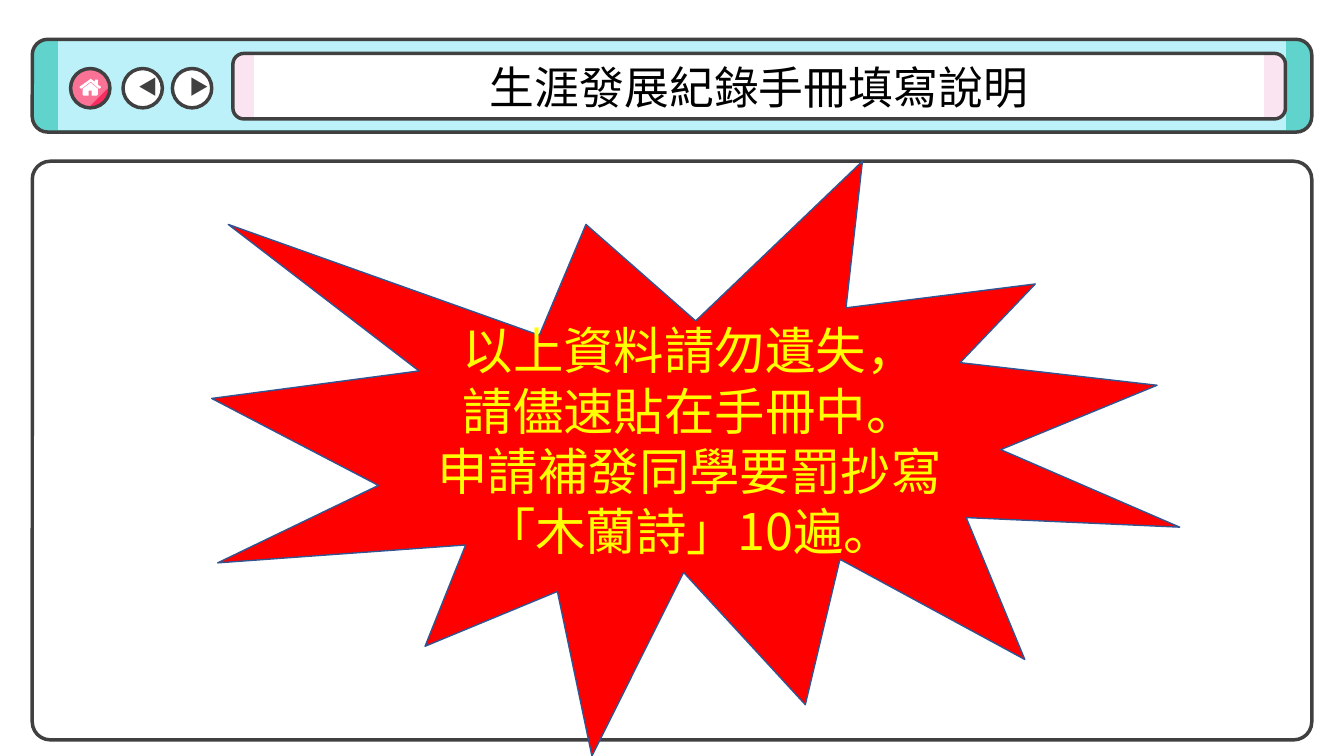
from dataclasses import dataclass

from lxml import etree
from pptx import Presentation
from pptx.dml.color import RGBColor
from pptx.enum.shapes import MSO_SHAPE
from pptx.enum.text import MSO_ANCHOR, PP_ALIGN
from pptx.oxml.ns import qn
from pptx.util import Inches, Pt

ROUND_RECT = MSO_SHAPE.ROUNDED_RECTANGLE
OVAL = MSO_SHAPE.OVAL
BURST = MSO_SHAPE.EXPLOSION1
MIDDLE = MSO_ANCHOR.MIDDLE
CENTER = PP_ALIGN.CENTER


@dataclass(frozen=True)
class Theme:
    outline: str = "404040"
    white: str = "FFFFFF"
    black: str = "000000"
    aqua: str = "BCF1FA"
    teal: str = "60D4CC"
    rose: str = "FA7296"
    crimson: str = "F82C61"
    blush: str = "FAE4F1"
    red: str = "FF0000"
    yellow: str = "FFFF00"
    burst_line: str = "325491"
    font: str = "Noto Sans CJK JP"
    arrow_font: str = "Noto Sans CJK KR"
    arrow_size: int = 14
    title_size: int = 32
    warning_size: int = 36
    frame_width: float = 2.5
    burst_width: float = 1


theme = Theme()


def paint(shape, colors, line=theme.outline, width=theme.frame_width,
          stops=(0.96, 0.96), route="shape", focus=(50, 50, 50, 50)):
    """Fill with one colour, or two as a path gradient around focus (l, t, r, b in %)."""
    shape.shadow.inherit = False
    if len(colors) == 1:
        shape.fill.solid()
        shape.fill.fore_color.rgb = RGBColor.from_string(colors[0])
    else:
        shape.fill.gradient()
        for stop, color, position in zip(shape.fill.gradient_stops, colors, stops):
            stop.color.rgb = RGBColor.from_string(color)
            stop.position = position
        linear = shape.element.spPr.find(qn("a:gradFill")).find(qn("a:lin"))
        gradient = linear.getparent()
        gradient.remove(linear)
        radial = etree.SubElement(gradient, qn("a:path"), {"path": route})
        edges = {side: str(share * 1000) for side, share in zip("ltrb", focus)}
        etree.SubElement(radial, qn("a:fillToRect"), edges)
    if line is None:
        shape.line.fill.background()
    else:
        shape.line.color.rgb = RGBColor.from_string(line)
        shape.line.width = Pt(width)


def write(shape, lines, size, color, font=theme.font, insets=(0.1, 0.05, 0.1, 0.05)):
    frame = shape.text_frame
    frame.word_wrap = True
    frame.vertical_anchor = MIDDLE
    (frame.margin_left, frame.margin_top,
     frame.margin_right, frame.margin_bottom) = map(Inches, insets)
    for index, line in enumerate(lines):
        para = frame.add_paragraph() if index else frame.paragraphs[0]
        para.alignment = CENTER
        span = para.add_run()
        span.text = line
        span.font.size = Pt(size)
        span.font.name = font
        span.font.color.rgb = RGBColor.from_string(color)
        etree.SubElement(span.font._element, qn("a:ea"), {"typeface": font})


deck = Presentation()
deck.slide_width = Inches(13.33)
deck.slide_height = Inches(7.5)
page = deck.slides.add_slide(deck.slide_layouts[6])

# Browser toolbar
toolbar = page.shapes.add_group_shape().shapes
bar = toolbar.add_shape(ROUND_RECT, Inches(0.32), Inches(0.39), Inches(12.69), Inches(0.92))
paint(bar, (theme.aqua, theme.teal))

button_top, button_size = Inches(0.68), Inches(0.39)
home = toolbar.add_shape(OVAL, Inches(0.7), button_top, button_size, button_size)
paint(home, (theme.rose, theme.crimson), stops=(0.71, 0.73),
      route="circle", focus=(0, 0, 100, 100))

# House icon, in hundredths of an inch
walls = [(90, 82), (82, 88), (82, 94), (83, 95), (88, 95), (88, 90),
         (91, 90), (91, 95), (96, 95), (97, 94), (97, 88)]
roof = [(100, 86), (97, 84), (97, 79), (94, 79), (94, 81), (91, 79), (90, 78),
        (89, 79), (79, 86), (79, 87), (80, 88), (81, 88), (90, 81), (98, 88),
        (99, 88), (100, 87)]
for outline in (walls, roof):
    builder = toolbar.build_freeform(*outline[0], scale=Inches(0.01))
    builder.add_line_segments(outline[1:], close=True)
    paint(builder.convert_to_shape(), (theme.white,), line=None)

for left, arrow, inset_left in ((1.22, "◀", 0.1), (1.71, "▶", 0.2)):
    button = toolbar.add_shape(OVAL, Inches(left), button_top, button_size, button_size)
    paint(button, (theme.white,))
    write(button, [arrow], theme.arrow_size, theme.outline, theme.arrow_font,
          (inset_left, 0.05, 0.16, 0.08))

# Address bar with the title
title = page.shapes.add_shape(ROUND_RECT, Inches(2.31), Inches(0.53), Inches(10.44), Inches(0.65))
paint(title, (theme.white, theme.blush))
write(title, ["生涯發展紀錄手冊填寫說明"], theme.title_size, theme.black)

# Content window
window = page.shapes.add_shape(ROUND_RECT, Inches(0.32), Inches(1.6), Inches(12.69), Inches(5.74))
window.adjustments[0] = 0.031
paint(window, (theme.white,))

# Warning
warning = page.shapes.add_shape(BURST, Inches(2.1), Inches(1.6), Inches(9.6), Inches(5.9))
paint(warning, (theme.red,), theme.burst_line, theme.burst_width)
write(warning, ["以上資料請勿遺失，", "請儘速貼在手冊中。", "申請補發同學要罰抄寫「木蘭詩」10遍。"],
      theme.warning_size, theme.yellow)

deck.save("out.pptx")
